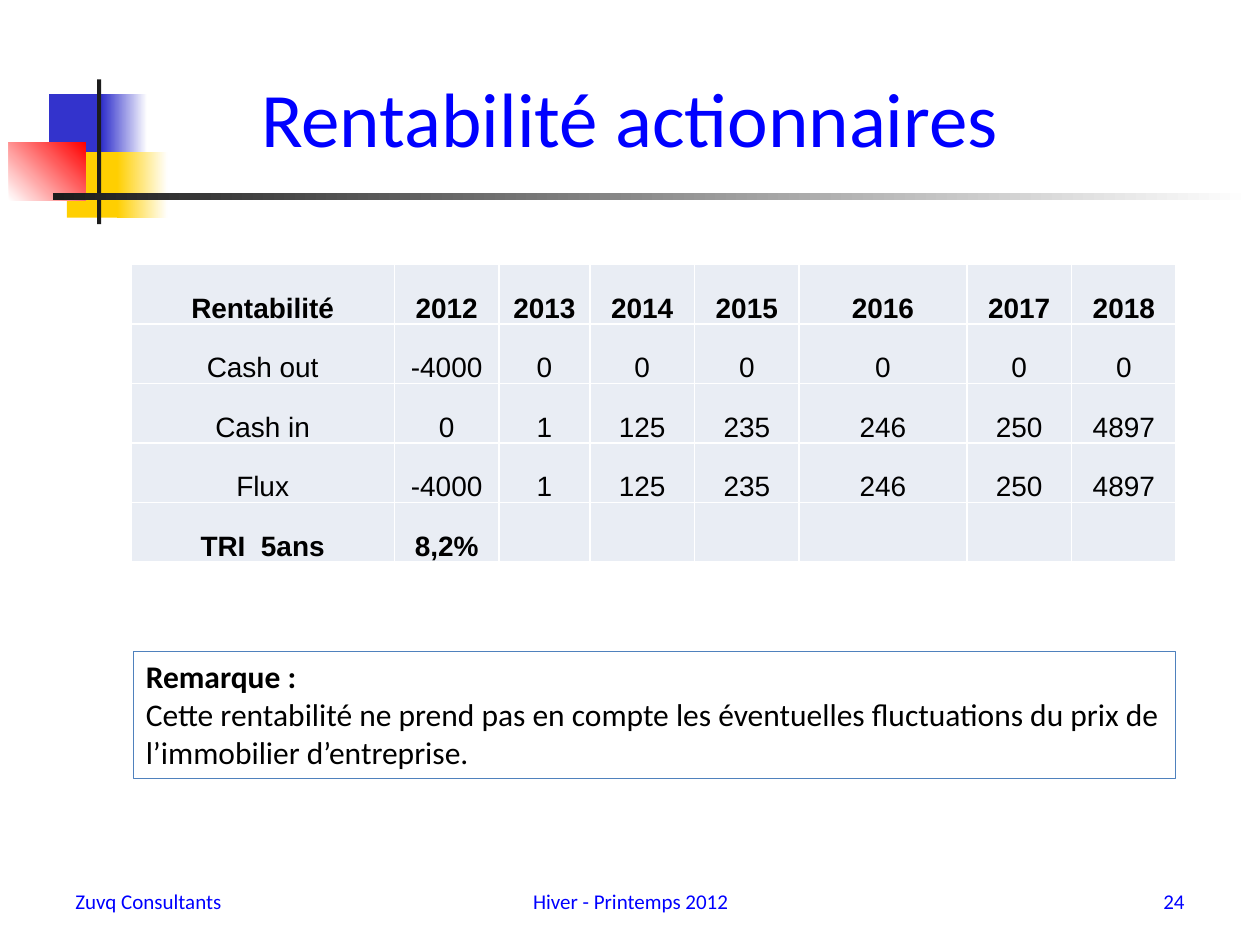
from dataclasses import dataclass

from lxml.etree import SubElement
from pptx import Presentation
from pptx.dml.color import RGBColor
from pptx.enum.shapes import MSO_SHAPE
from pptx.enum.text import MSO_ANCHOR, PP_ALIGN
from pptx.oxml.ns import qn
from pptx.util import Cm, Pt


@dataclass(frozen=True)
class Theme:
    blue: str = "3333CC"
    yellow: str = "FFCF01"
    red: str = "FF0000"
    dark: str = "1C1C1C"
    white: str = "FFFFFF"
    black: str = "000000"
    heading: str = "0000FF"
    cell: str = "E9EDF4"
    frame: str = "4F81BD"
    title_size: int = 44
    note_size: int = 18
    table_size: int = 16
    footer_size: int = 12
    body_font: str = "Calibri"
    table_font: str = "Arial"


THEME = Theme()

# Left, top, width, height in cm; first and last colour; gradient angle
ORNAMENTS = [
    ((0.99, 1.9, 1.22, 1.32), THEME.blue, None, 0),
    ((2.06, 1.9, 0.91, 1.32), THEME.blue, THEME.white, 0),
    ((1.35, 3.07, 1.17, 1.32), THEME.yellow, None, 0),
    ((2.36, 3.07, 1.02, 1.32), THEME.yellow, THEME.white, 0),
    ((0.18, 2.87, 1.55, 1.17), THEME.white, THEME.red, 45),
    ((1.96, 1.6, 0.08, 2.92), THEME.dark, None, 0),
    ((1.07, 3.89, 24.16, 0.15), THEME.dark, THEME.white, 0),
]

COLUMN_WIDTHS = [5.31, 2.11, 1.83, 2.11, 2.11, 3.38, 2.11, 2.11]
ROW_HEIGHT = 1.2
ROWS = [
    ["Rentabilité", "2012", "2013", "2014", "2015", "2016", "2017", "2018"],
    ["Cash out", "-4000", "0", "0", "0", "0", "0", "0"],
    ["Cash in", "0", "1", "125", "235", "246", "250", "4897"],
    ["Flux", "-4000", "1", "125", "235", "246", "250", "4897"],
    ["TRI  5ans", "8,2%", "", "", "", "", "", ""],
]
BOLD_ROWS = (0, len(ROWS) - 1)

FOOTERS = [
    ("Zuvq Consultants", 1.27, 5.92, PP_ALIGN.LEFT),
    ("Hiver - Printemps 2012", 8.69, 8.05, PP_ALIGN.CENTER),
    ("24", 18.21, 5.92, PP_ALIGN.RIGHT),
]


def write_text(paragraph, text, *, size, color=THEME.black, font=THEME.body_font,
               bold=False, align=PP_ALIGN.LEFT):
    paragraph.alignment = align
    run = paragraph.add_run()
    run.text = text
    run.font.size = Pt(size)
    run.font.name = font
    run.font.bold = bold
    run.font.color.rgb = RGBColor.from_string(color)


def place(shape, left, top, width, height):
    shape.left, shape.top = Cm(left), Cm(top)
    shape.width, shape.height = Cm(width), Cm(height)


def add_ornament(slide, box, first_color, last_color, angle):
    shape = slide.shapes.add_shape(MSO_SHAPE.RECTANGLE, *map(Cm, box))
    shape.shadow.inherit = False
    shape.line.fill.background()
    if last_color is None:
        shape.fill.solid()
        shape.fill.fore_color.rgb = RGBColor.from_string(first_color)
        return
    shape.fill.gradient()
    shape.fill.gradient_angle = angle
    for stop, color in zip(shape.fill.gradient_stops, (first_color, last_color)):
        stop.color.rgb = RGBColor.from_string(color)


def add_title(slide, text):
    title = slide.shapes.title
    place(title, 1.27, 0.76, 22.86, 3.18)
    title.text_frame.vertical_anchor = MSO_ANCHOR.MIDDLE
    write_text(title.text_frame.paragraphs[0], text, size=THEME.title_size,
               color=THEME.heading, align=PP_ALIGN.CENTER)


def add_footer(slide, text, left, width, align):
    box = slide.shapes.add_textbox(Cm(left), Cm(17.65), Cm(width), Cm(1.02))
    box.text_frame.word_wrap = True
    box.text_frame.vertical_anchor = MSO_ANCHOR.MIDDLE
    write_text(box.text_frame.paragraphs[0], text, size=THEME.footer_size,
               color=THEME.heading, align=align)


def add_note(slide, heading, body):
    box = slide.shapes.add_textbox(Cm(2.69), Cm(13.13), Cm(21.01), Cm(2.57))
    box.line.color.rgb = RGBColor.from_string(THEME.frame)
    box.line.width = Pt(0.75)
    frame = box.text_frame
    frame.word_wrap = True
    write_text(frame.paragraphs[0], heading, size=THEME.note_size, bold=True)
    write_text(frame.add_paragraph(), body, size=THEME.note_size)


def set_borders(cell, color):
    properties = cell._tc.get_or_add_tcPr()
    for side in ("a:lnL", "a:lnR", "a:lnT", "a:lnB"):
        line = SubElement(properties, qn(side), w=str(Pt(1)))
        fill = SubElement(line, qn("a:solidFill"))
        SubElement(fill, qn("a:srgbClr"), val=color)


def format_cell(cell, text, bold):
    set_borders(cell, THEME.white)
    cell.fill.solid()
    cell.fill.fore_color.rgb = RGBColor.from_string(THEME.cell)
    cell.margin_left = cell.margin_right = cell.margin_top = cell.margin_bottom = 0
    cell.vertical_anchor = MSO_ANCHOR.BOTTOM
    if text:
        write_text(cell.text_frame.paragraphs[0], text, size=THEME.table_size,
                   font=THEME.table_font, bold=bold, align=PP_ALIGN.CENTER)


def add_cash_table(slide):
    table = slide.shapes.add_table(
        len(ROWS), len(COLUMN_WIDTHS), Cm(2.64), Cm(5.33),
        Cm(sum(COLUMN_WIDTHS)), Cm(ROW_HEIGHT * len(ROWS))).table
    for column, width in zip(table.columns, COLUMN_WIDTHS):
        column.width = Cm(width)
    for row_index, values in enumerate(ROWS):
        table.rows[row_index].height = Cm(ROW_HEIGHT)
        for column_index, value in enumerate(values):
            format_cell(table.cell(row_index, column_index), value,
                        row_index in BOLD_ROWS)


def main():
    presentation = Presentation()
    presentation.slide_width, presentation.slide_height = Cm(25.4), Cm(19.05)
    slide = presentation.slides.add_slide(presentation.slide_layouts[5])

    # Header
    for ornament in ORNAMENTS:
        add_ornament(slide, *ornament)
    add_title(slide, "Rentabilité actionnaires")

    # Footer
    for footer in FOOTERS:
        add_footer(slide, *footer)

    # Content
    add_note(slide, "Remarque :",
             "Cette rentabilité ne prend pas en compte les éventuelles "
             "fluctuations du prix de l’immobilier d’entreprise.")
    add_cash_table(slide)

    presentation.save("out.pptx")


if __name__ == "__main__":
    main()
